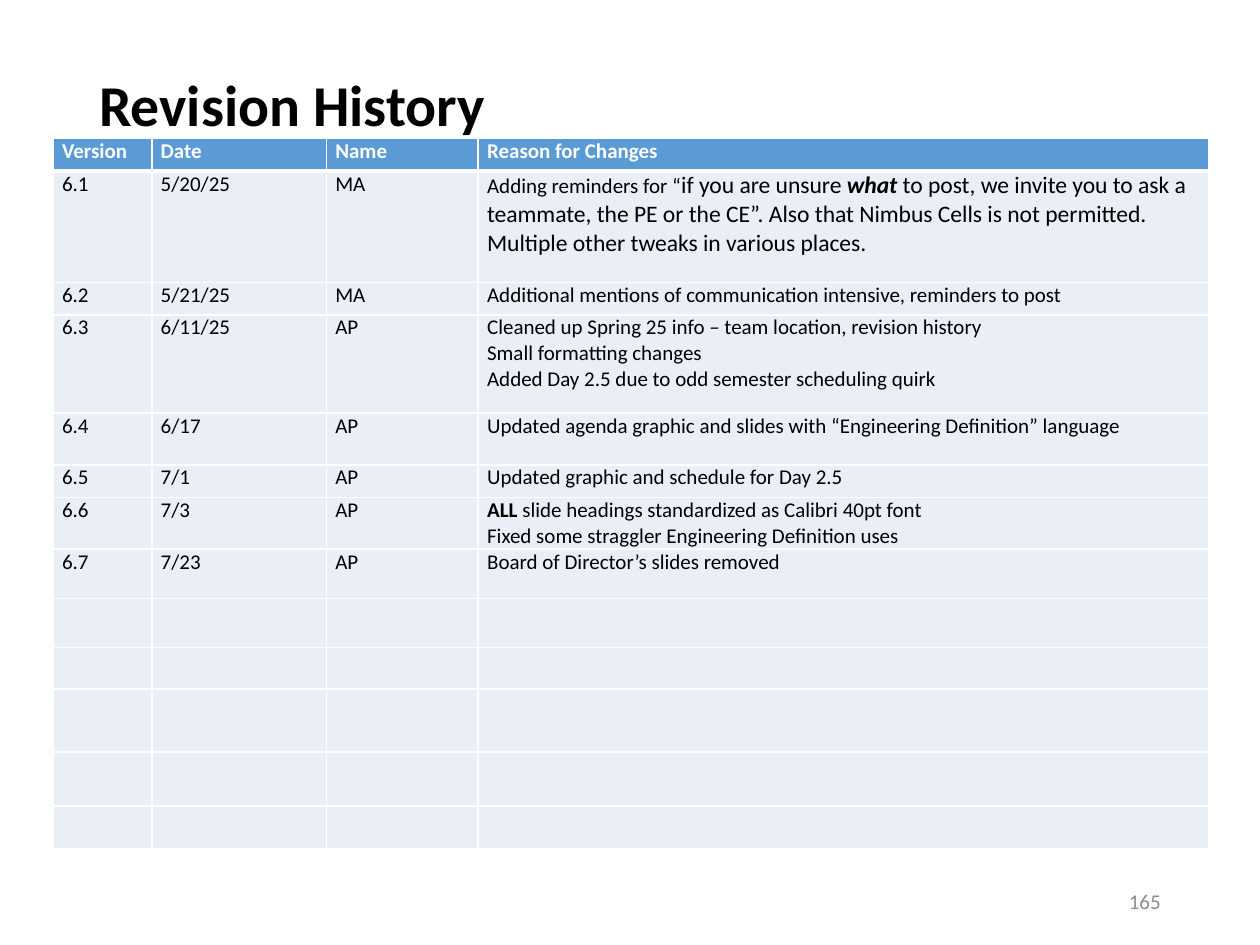
"""Build the revision history slide with its table of versions."""
from dataclasses import dataclass

from lxml.etree import SubElement
from pptx import Presentation
from pptx.dml.color import RGBColor
from pptx.enum.text import MSO_ANCHOR, PP_ALIGN
from pptx.oxml.ns import qn
from pptx.util import Cm, Pt


@dataclass(frozen=True)
class Theme:
    font: str = "Calibri"
    ink: str = "000000"
    paper: str = "FFFFFF"
    header: str = "5B9BD5"
    band: str = "EAEFF7"
    muted: str = "8C8C8C"
    title_size: float = 33
    quote_size: float = 13.5
    body_size: float = 12
    rule: float = 1
    header_rule: float = 3


THEME = Theme()
QUOTE = {"size": Pt(THEME.quote_size)}
HEADINGS = ["Version", "Date", "Name", "Reason for Changes"]
REVISIONS = [
    ["6.1", "5/20/25", "MA", [[
        "Adding reminders for “",
        ("if you are unsure ", QUOTE),
        ("what", {**QUOTE, "bold": True, "italic": True}),
        (" to post, we invite you to ask a teammate, the PE or the CE”. "
         "Also that Nimbus Cells is not permitted. "
         "Multiple other tweaks in various places.", QUOTE),
    ]]],
    ["6.2", "5/21/25", "MA",
     "Additional mentions of communication intensive, reminders to post"],
    ["6.3", "6/11/25", "AP", [
        ["Cleaned up Spring 25 info – team location, revision history"],
        ["Small formatting changes"],
        ["Added Day 2.5 due to odd semester scheduling quirk"],
    ]],
    ["6.4", "6/17", "AP",
     "Updated agenda graphic and slides with “Engineering Definition” language"],
    ["6.5", "7/1", "AP", "Updated graphic and schedule for Day 2.5"],
    ["6.6", "7/3", "AP", [
        [("ALL", {"bold": True}), " slide headings standardized as Calibri 40pt font"],
        ["Fixed some straggler Engineering Definition uses"],
    ]],
    ["6.7", "7/23", "AP", "Board of Director’s slides removed"],
]
COLUMN_WIDTHS = [1.99, 3.52, 3.06, 14.72]
ROW_HEIGHTS = [0.66, 2.24, 0.66, 1.98, 1.04, 0.66, 1.04, 0.99, 0.99, 0.84, 1.27, 1.09, 0.86]


class SlideBuilder:
    def __init__(self, slide, theme):
        self.slide = slide
        self.theme = theme

    def fill_text(self, frame, content, color, **formats):
        paragraphs = [[content]] if isinstance(content, str) else content
        for index, pieces in enumerate(paragraphs):
            line = frame.add_paragraph() if index else frame.paragraphs[0]
            for piece in pieces:
                words, extra = (piece, {}) if isinstance(piece, str) else piece
                run = line.add_run()
                run.text = words
                run.font.color.rgb = RGBColor.from_string(color)
                values = {"name": self.theme.font, "size": Pt(self.theme.body_size),
                          "bold": False, **formats, **extra}
                for name, value in values.items():
                    setattr(run.font, name, value)

    def text(self, content, box, color, frame_formats, line_formats, **formats):
        frame = self.slide.shapes.add_textbox(*map(Cm, box)).text_frame
        for name, value in {"word_wrap": True, **frame_formats}.items():
            setattr(frame, name, value)
        self.fill_text(frame, content, color, **formats)
        for name, value in line_formats.items():
            setattr(frame.paragraphs[0], name, value)

    def border(self, cell, side, width):
        properties = cell._tc.get_or_add_tcPr()
        line = SubElement(properties, qn(f"a:ln{side}"), w=str(Pt(width)))
        fill = SubElement(line, qn("a:solidFill"))
        SubElement(fill, qn("a:srgbClr"), val=self.theme.paper)

    def cell(self, cell, content, row):
        theme = self.theme
        formats = {"margin_left": Cm(0.18), "margin_right": Cm(0.18),
                   "margin_top": 0, "margin_bottom": 0}
        for name, value in formats.items():
            setattr(cell, name, value)
        thick_side = {0: "B", 1: "T"}.get(row)
        for side in "LRTB":
            self.border(cell, side, theme.header_rule if side == thick_side else theme.rule)
        cell.fill.solid()
        cell.fill.fore_color.rgb = RGBColor.from_string(theme.band if row else theme.header)
        if content:
            self.fill_text(cell.text_frame, content, theme.ink if row else theme.paper,
                           bold=row == 0)

    def table(self, rows, left, top, widths, heights):
        table = self.slide.shapes.add_table(
            len(heights), len(widths), Cm(left), Cm(top),
            Cm(sum(widths)), Cm(sum(heights))).table
        for column, width in zip(table.columns, widths):
            column.width = Cm(width)
        for index, height in enumerate(heights):
            table.rows[index].height = Cm(height)
            entries = rows[index] if index < len(rows) else [""] * len(widths)
            for column, content in enumerate(entries):
                self.cell(table.cell(index, column), content, index)


def main():
    deck = Presentation()
    deck.slide_width, deck.slide_height = Cm(25.4), Cm(19.05)
    builder = SlideBuilder(deck.slides.add_slide(deck.slide_layouts[6]), THEME)
    builder.text("Revision History", (1.75, 1.02, 21.9, 3.68), THEME.ink,
                 {"vertical_anchor": MSO_ANCHOR.TOP, "margin_top": Cm(0.53)},
                 {"line_spacing": 0.9}, size=Pt(THEME.title_size), bold=True)
    builder.table([HEADINGS, *REVISIONS], 1.07, 2.79, COLUMN_WIDTHS, ROW_HEIGHTS)
    builder.text("165", (17.93, 17.65, 5.72, 1.02), THEME.muted,
                 {"vertical_anchor": MSO_ANCHOR.MIDDLE}, {"alignment": PP_ALIGN.RIGHT})
    deck.save("out.pptx")


if __name__ == "__main__":
    main()
